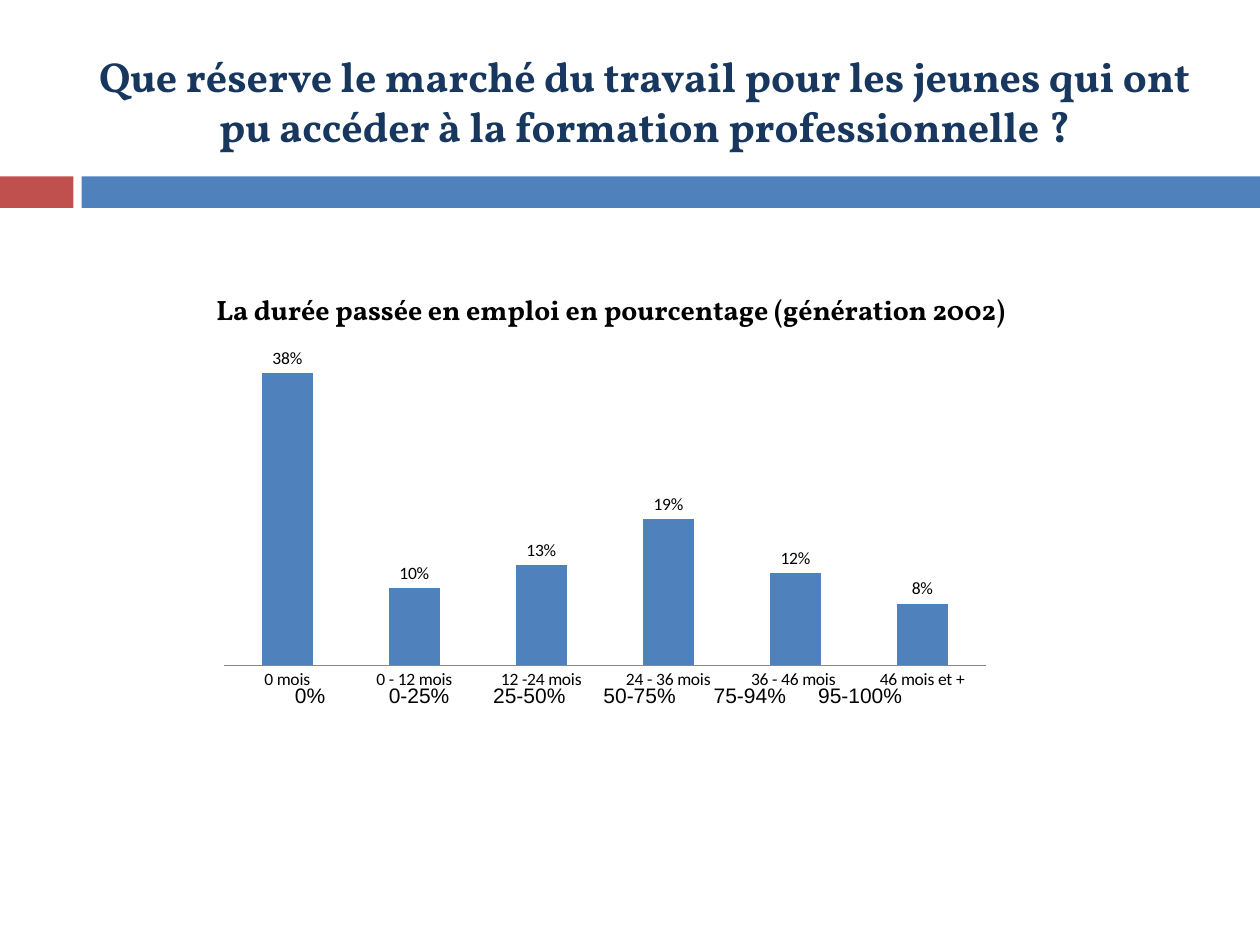
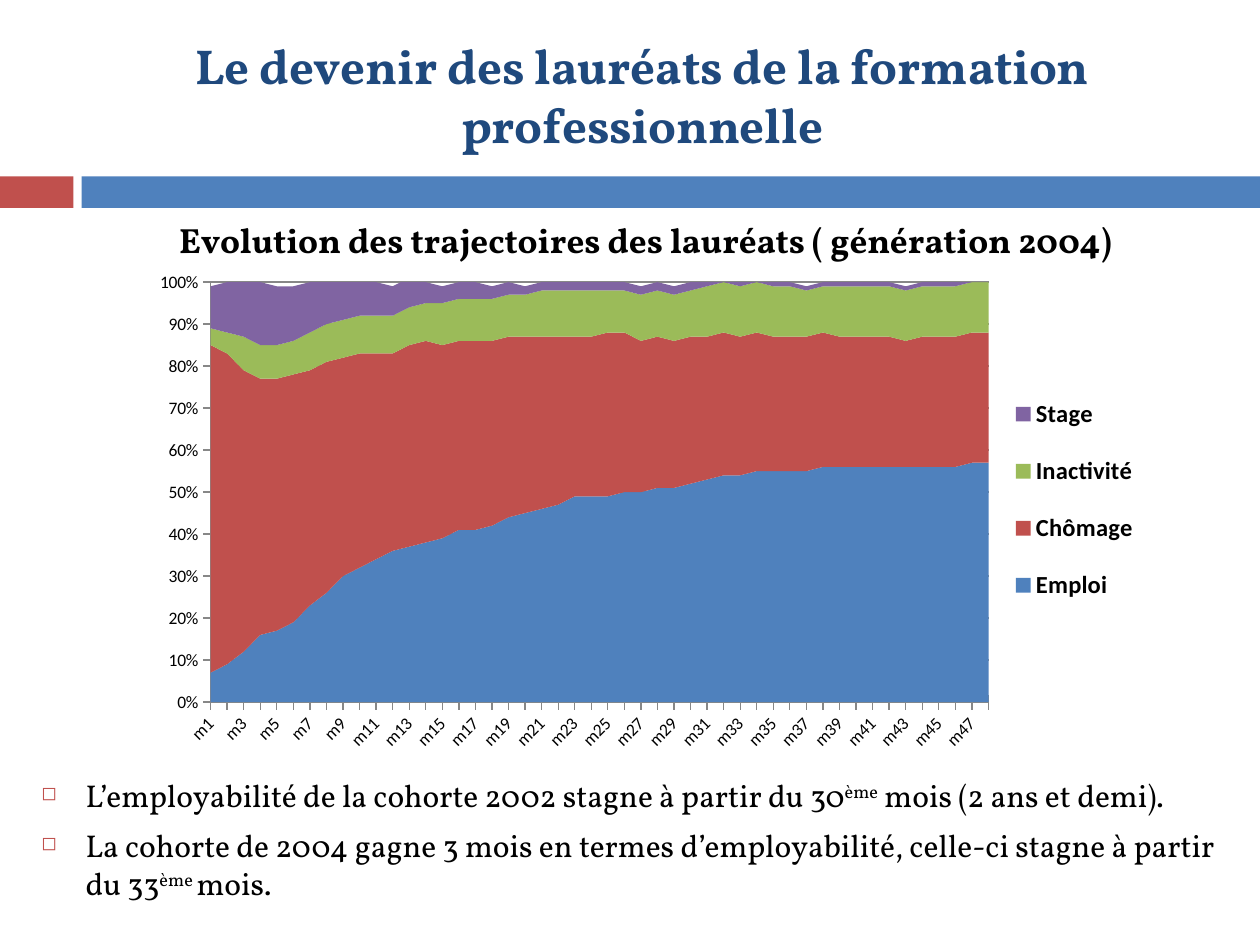
from lxml.etree import SubElement
from pptx import Presentation
from pptx.chart.data import CategoryChartData
from pptx.dml.color import RGBColor
from pptx.enum.chart import XL_CHART_TYPE, XL_LABEL_POSITION, XL_LEGEND_POSITION, XL_TICK_MARK
from pptx.enum.shapes import MSO_SHAPE
from pptx.enum.text import MSO_ANCHOR, PP_ALIGN
from pptx.oxml import parse_xml
from pptx.oxml.ns import nsdecls, qn
from pptx.util import Pt

NAVY = RGBColor(0x17, 0x37, 0x5E)
DARK_BLUE = RGBColor(0x1F, 0x49, 0x7D)
BLUE = RGBColor(0x4F, 0x81, 0xBD)
RED = RGBColor(0xC0, 0x50, 0x4D)
GREEN = RGBColor(0x9B, 0xBB, 0x59)
PURPLE = RGBColor(0x80, 0x64, 0xA2)
GREY = RGBColor(0x87, 0x87, 0x87)
BLACK = RGBColor(0, 0, 0)
SERIF = "Vollkorn"

BANDS = [(0, 42, RED), (46.6, 673.4, BLUE)]

LABOUR_TITLE = ["Que réserve le marché du travail pour les jeunes qui ont pu accéder "
                "à la formation professionnelle ?"]
DURATION_HEADING = ["La durée passée en emploi en pourcentage (génération 2002)"]
DURATIONS = {"0 mois": 38, "0 - 12 mois": 10, "12 -24 mois": 13,
             "24 - 36 mois": 19, "36 - 46 mois ": 12, "46 mois et +": 8}
TIME_SHARES = ["0%", "0-25%", "25-50%", "50-75%", "75-94%", "95-100%"]

GRADUATE_TITLE = ["Le devenir des lauréats de la formation ", "professionnelle "]
PATHS_HEADING = ["Evolution des trajectoires des lauréats ( génération 2004)"]
PATHS = [
    ("Emploi", BLUE, [
        7, 9, 12, 16, 17, 19, 23, 26, 30, 32, 34, 36, 37, 38, 39, 41,
        41, 42, 44, 45, 46, 47, 49, 49, 49, 50, 50, 51, 51, 52, 53, 54,
        54, 55, 55, 55, 55, 56, 56, 56, 56, 56, 56, 56, 56, 56, 57, 57]),
    ("Chômage", RED, [
        78, 74, 67, 61, 60, 59, 56, 55, 52, 51, 49, 47, 48, 48, 46, 45,
        45, 44, 43, 42, 41, 40, 38, 38, 39, 38, 36, 36, 35, 35, 34, 34,
        33, 33, 32, 32, 32, 32, 31, 31, 31, 31, 30, 31, 31, 31, 31, 31]),
    ("Inactivité", GREEN, [
        4, 5, 8, 8, 8, 8, 9, 9, 9, 9, 9, 9, 9, 9, 10, 10,
        10, 10, 10, 10, 11, 11, 11, 11, 10, 10, 11, 11, 11, 11, 12, 12,
        12, 12, 12, 12, 11, 11, 12, 12, 12, 12, 12, 12, 12, 12, 12, 12]),
    ("Stage", PURPLE, [
        10, 12, 13, 15, 14, 13, 12, 10, 9, 8, 8, 7, 7, 5, 4, 4,
        4, 3, 3, 2, 2, 2, 2, 2, 2, 2, 2, 2, 2, 2, 1, 1,
        1, 1, 1, 1, 1, 1, 1, 1, 1, 1, 1, 1, 1, 1, 1, 1]),
]
FINDINGS = [
    ("L’employabilité de la cohorte 2002 stagne à partir du 30", "ème",
     " mois (2 ans et demi)."),
    ("La cohorte de 2004 gagne 3 mois en termes d’employabilité, "
     "celle-ci stagne à partir du 33", "ème ", "mois."),
]


def add_page(deck):
    page = deck.slides.add_slide(deck.slide_layouts[6])
    for left, width, colour in BANDS:
        band = page.shapes.add_shape(MSO_SHAPE.RECTANGLE, Pt(left), Pt(100.8), Pt(width), Pt(18))
        band.shadow.inherit = False
        band.fill.solid()
        band.fill.fore_color.rgb = colour
        band.line.fill.background()
    return page


def add_frame(page, place):
    frame = page.shapes.add_textbox(*map(Pt, place)).text_frame
    frame.word_wrap = True
    return frame


def set_font(font, size, colour=BLACK, name=SERIF, bold=False):
    font.size = Pt(size)
    font.name = name
    font.bold = bold
    font.color.rgb = colour


def add_heading(page, lines, place, size, colour=BLACK, hanging=0):
    frame = add_frame(page, place)
    frame.vertical_anchor = MSO_ANCHOR.MIDDLE
    for number, line in enumerate(lines):
        para = frame.add_paragraph() if number else frame.paragraphs[0]
        para.text = line
        para.alignment = PP_ALIGN.CENTER
        if hanging:
            set_hanging(para, hanging)
        set_font(para.font, size, colour, bold=True)


def set_hanging(para, indent):
    properties = para._p.get_or_add_pPr()
    properties.set("marL", str(Pt(indent)))
    properties.set("indent", str(Pt(-indent)))
    return properties


def add_time_shares(page):
    frame = add_frame(page, (157.7, 386.6, 375.8, 21.6))
    frame.margin_left = Pt(10.8)
    para = frame.paragraphs[0]
    tabs = SubElement(para._p.get_or_add_pPr(), qn("a:tabLst"))
    for step in range(len(TIME_SHARES) - 1):
        SubElement(tabs, qn("a:tab"), pos=str(Pt(71 + 63 * step)), algn="ctr")
    para.add_run().text = "\t".join(TIME_SHARES)
    set_font(para.font, 12, name="Arial")


def add_findings(page):
    frame = add_frame(page, (16.6, 440, 689.8, 81.4))
    for number, parts in enumerate(FINDINGS):
        para = frame.add_paragraph() if number else frame.paragraphs[0]
        properties = set_hanging(para, 25.2)
        colour = SubElement(properties, qn("a:buClr"))
        SubElement(colour, qn("a:srgbClr"), val=str(RED))
        SubElement(properties, qn("a:buSzPct"), val="60000")
        SubElement(properties, qn("a:buChar"), char="◻")
        if number:
            para.space_before = Pt(7)
        set_font(para.font, 18)
        for position, text in enumerate(parts):
            span = para.add_run()
            span.text = text
            if position == 1:
                span.font._element.set("baseline", "30000")


def add_chart(page, kind, place, categories, series):
    data = CategoryChartData(number_format="0%")
    data.categories = categories
    for name, _, values in series:
        data.add_series(name, [value / 100 for value in values])
    chart = page.shapes.add_chart(kind, *map(Pt, place), data).chart
    chart.has_title = False
    chart.has_legend = False
    set_font(chart.font, 10, name="Calibri")
    plot = chart.plots[0]
    plot.vary_by_categories = False
    for drawn, (_, colour, _) in zip(plot.series, series):
        drawn.format.fill.solid()
        drawn.format.fill.fore_color.rgb = colour
    chart.category_axis.format.line.color.rgb = GREY
    return chart


def set_layout(element, index, x, y, width, height, inner=False):
    for old in element.findall(qn("c:layout")):
        element.remove(old)
    target = '<c:layoutTarget val="inner"/>' if inner else ""
    sizes = "".join(f'<c:{tag} val="{value}"/>'
                    for tag, value in zip("xywh", (x, y, width, height)))
    element.insert(index, parse_xml(
        f'<c:layout {nsdecls("c")}><c:manualLayout>{target}<c:xMode val="edge"/>'
        f'<c:yMode val="edge"/>{sizes}</c:manualLayout></c:layout>'))


def add_duration_chart(page):
    chart = add_chart(page, XL_CHART_TYPE.COLUMN_CLUSTERED, (118.8, 199.4, 453.6, 198.7),
                      list(DURATIONS), [("Series 1", BLUE, DURATIONS.values())])
    chart.category_axis.major_tick_mark = XL_TICK_MARK.NONE
    axis = chart.value_axis
    axis.visible = False
    axis.has_major_gridlines = False
    axis.minimum_scale = 0
    plot = chart.plots[0]
    plot.gap_width = 150
    plot.has_data_labels = True
    labels = plot.data_labels
    labels.show_value = True
    labels.number_format = "0%"
    labels.number_format_is_linked = False
    labels.position = XL_LABEL_POSITION.OUTSIDE_END


def add_paths_chart(page):
    months = [f"m{number}" for number in range(1, len(PATHS[0][2]) + 1)]
    chart = add_chart(page, XL_CHART_TYPE.AREA_STACKED, (79.9, 149.8, 577.4, 285.8),
                      months, PATHS)
    axis = chart.value_axis
    axis.minimum_scale, axis.maximum_scale, axis.major_unit = 0, 1, 0.1
    axis.has_major_gridlines = True
    axis.major_gridlines.format.line.color.rgb = GREY
    axis.format.line.color.rgb = GREY
    axis.tick_labels.number_format = "0%"
    axis.tick_labels.number_format_is_linked = False
    axis._element.find(qn("c:crossBetween")).set("val", "midCat")
    for each in (axis, chart.category_axis):
        each.major_tick_mark = XL_TICK_MARK.CROSS
    set_font(chart.category_axis.tick_labels.font, 10, name="Calibri")
    body = chart.category_axis._element.find(qn("c:txPr")).find(qn("a:bodyPr"))
    body.set("rot", "-2700000")
    chart.has_legend = True
    legend = chart.legend
    legend.position = XL_LEGEND_POSITION.RIGHT
    legend.include_in_layout = False
    set_font(legend.font, 14, name="Calibri", bold=True)
    set_layout(legend._element, 1, 0.85, 0.22, 0.15, 0.51)
    plot_area = chart._chartSpace.find(qn("c:chart")).find(qn("c:plotArea"))
    set_layout(plot_area, 0, 0.07, 0.04, 0.77, 0.84, inner=True)


def main():
    deck = Presentation()
    deck.slide_width, deck.slide_height = Pt(720), Pt(540)

    page = add_page(deck)
    add_duration_chart(page)
    add_heading(page, DURATION_HEADING, (79.9, 163.4, 538.6, 26.6), 16)
    add_time_shares(page)
    add_heading(page, LABOUR_TITLE, (48.2, 18.7, 640.1, 77.8), 24, NAVY)

    page = add_page(deck)
    add_heading(page, PATHS_HEADING, (90.7, 121, 556.6, 31.7), 20)
    add_paths_chart(page)
    add_heading(page, GRADUATE_TITLE, (69.1, 15.1, 601.2, 77.8), 28, DARK_BLUE, hanging=40.3)
    add_findings(page)

    deck.save("out.pptx")


if __name__ == "__main__":
    main()
